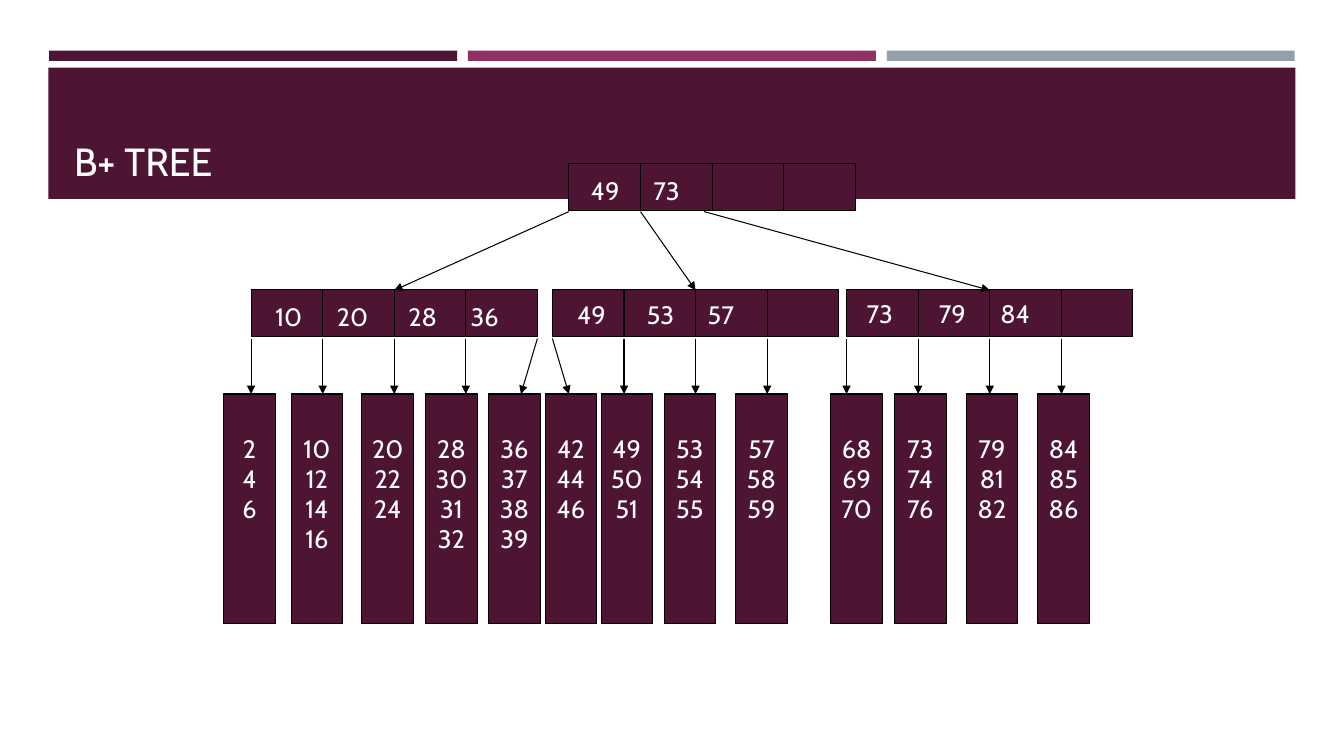
from lxml.etree import SubElement
from pptx import Presentation
from pptx.dml.color import RGBColor
from pptx.enum.shapes import MSO_CONNECTOR, MSO_SHAPE
from pptx.enum.text import MSO_ANCHOR, PP_ALIGN
from pptx.oxml.ns import qn
from pptx.util import Inches, Pt

COLORS = {"plum": "4D1434", "berry": "903163", "steel": "969FA7",
          "ink": "000000", "white": "FFFFFF"}
FONT = "Cabin"

# One column is the width of a key cell, one row the height of a node.
COLUMN, ROW = 0.71, 0.47
GRID_LEFT, GRID_TOP = 2.49, 1.62
CELLS = 4
ROOT_ROW, INNER_ROW, LEAF_ROW = 0, 2.66, 4.87
LEAF_WIDTH, LEAF_HEIGHT = 0.72, 4.85

# Each node: left column, row, keys, tab stops, and the place and width of its keys.
ROOT = (4.44, ROOT_ROW, [49, 73], [0.87], (0.17, 0.15, 2.18))
INNER_NODES = [
    (0, INNER_ROW, [10, 20, 28, 36], [0.86, 1.86, 2.73], (0.2, 0.15, 3.68)),
    (4.21, INNER_ROW, [49, 53, 57], [0.97, 1.82], (0.21, 0.11, 2.63)),
    (8.32, INNER_ROW, [73, 79, 84], [1.01, 1.87], (0.14, 0.09, 2.73)),
]
ROOT_POINTERS = [0, 1, 1.89]
# Sideways lean of the arrows that leave each inner node.
LEAF_POINTER_LEANS = [[0, 0, 0, 0, -0.23], [0.23, 0, 0, 0], [0, 0, 0, 0]]
LEAVES = [
    (-0.38, [2, 4, 6]), (0.56, [10, 12, 14, 16]), (1.55, [20, 22, 24]),
    (2.44, [28, 30, 31, 32]), (3.32, [36, 37, 38, 39]), (4.11, [42, 44, 46]),
    (4.89, [49, 50, 51]), (5.77, [53, 54, 55]), (6.77, [57, 58, 59]),
    (8.1, [68, 69, 70]), (8.99, [73, 74, 76]), (9.99, [79, 81, 82]),
    (10.99, [84, 85, 86]),
]


def color(name):
    return RGBColor.from_string(COLORS[name])


def x(column):
    return Inches(GRID_LEFT + column * COLUMN)


def y(row):
    return Inches(GRID_TOP + row * ROW)


def place(column, row, columns, rows):
    """Turn a grid area into left, top, width and height."""
    return x(column), y(row), Inches(columns * COLUMN), Inches(rows * ROW)


def add_block(shapes, area, fill="plum", outlined=True):
    block = shapes.add_shape(MSO_SHAPE.RECTANGLE, *place(*area))
    block.shadow.inherit = False
    block.fill.solid()
    block.fill.fore_color.rgb = color(fill)
    if outlined:
        block.line.color.rgb = color("ink")
        block.line.width = Pt(0.75)
    else:
        block.line.fill.background()
    return block


def add_line(shapes, start, end, arrow=False):
    line = shapes.add_connector(MSO_CONNECTOR.STRAIGHT, x(start[0]), y(start[1]),
                                x(end[0]), y(end[1]))
    line.line.color.rgb = color("ink")
    line.line.width = Pt(0.75)
    if arrow:
        SubElement(line.line._get_or_add_ln(), qn("a:tailEnd"), type="triangle")
    SubElement(line._element.spPr, qn("a:effectLst"))


def write(para, text, size=18):
    para.text = text
    para.font.name = FONT
    para.font.size = Pt(size)
    para.font.color.rgb = color("white")


def add_text_box(shapes, area):
    box = shapes.add_textbox(*place(*area))
    box.text_frame.word_wrap = True
    return box.text_frame


def add_header(page):
    for index, fill in enumerate(["plum", "berry", "steel"]):
        add_block(page.shapes, (-2.82 + index * 5.85, -2.38, 5.7, 0.22), fill, False)
    add_block(page.shapes, (-2.83, -2.02, 17.42, 2.77), "plum", False)
    title = add_text_box(page.shapes, (-2.61, -1.81, 16.99, 2.36))
    title.vertical_anchor = MSO_ANCHOR.BOTTOM
    write(title.paragraphs[0], "B+ TREE", 28)


def add_node(page, left, row, keys, stops, key_area):
    """Group a row of cells with its keys, set apart by tab stops."""
    shapes = page.shapes.add_group_shape().shapes
    add_block(shapes, (left, row, CELLS, 1))
    for cell in range(1, CELLS):
        add_line(shapes, (left + cell, row), (left + cell, row + 1))
    indent, drop, width = key_area
    frame = add_text_box(shapes, (left + indent, row + drop, width, 0.85))
    para = frame.paragraphs[0]
    tabs = SubElement(para._p.get_or_add_pPr(), qn("a:tabLst"))
    for stop in stops:
        SubElement(tabs, qn("a:tab"), pos=str(Inches(stop * COLUMN)), algn="l")
    write(para, "\t".join(map(str, keys)))


def add_leaf(page, left, keys):
    leaf = add_block(page.shapes, (left, LEAF_ROW, LEAF_WIDTH, LEAF_HEIGHT))
    frame = leaf.text_frame
    frame.word_wrap = True
    frame.vertical_anchor = MSO_ANCHOR.TOP
    frame.margin_left = frame.margin_right = 0
    frame.margin_top = Inches(0.82 * ROW)
    for index, key in enumerate(keys):
        para = frame.add_paragraph() if index else frame.paragraphs[0]
        para.alignment = PP_ALIGN.CENTER
        write(para, str(key))


def add_pointers(page):
    for pointer, node in zip(ROOT_POINTERS, INNER_NODES):
        add_line(page.shapes, (ROOT[0] + pointer, 1.02),
                 (node[0] + CELLS / 2, INNER_ROW + 0.02), arrow=True)
    for node, leans in zip(INNER_NODES, LEAF_POINTER_LEANS):
        for cell, lean in enumerate(leans):
            start = node[0] + cell
            add_line(page.shapes, (start, INNER_ROW + 1.04),
                     (start + lean, LEAF_ROW), arrow=True)


def main():
    deck = Presentation()
    deck.slide_width, deck.slide_height = Inches(13.33), Inches(7.5)
    page = deck.slides.add_slide(deck.slide_layouts[6])
    add_header(page)
    for node in [ROOT, *INNER_NODES]:
        add_node(page, *node)
    for leaf in LEAVES:
        add_leaf(page, *leaf)
    add_pointers(page)
    deck.save("out.pptx")


if __name__ == "__main__":
    main()
